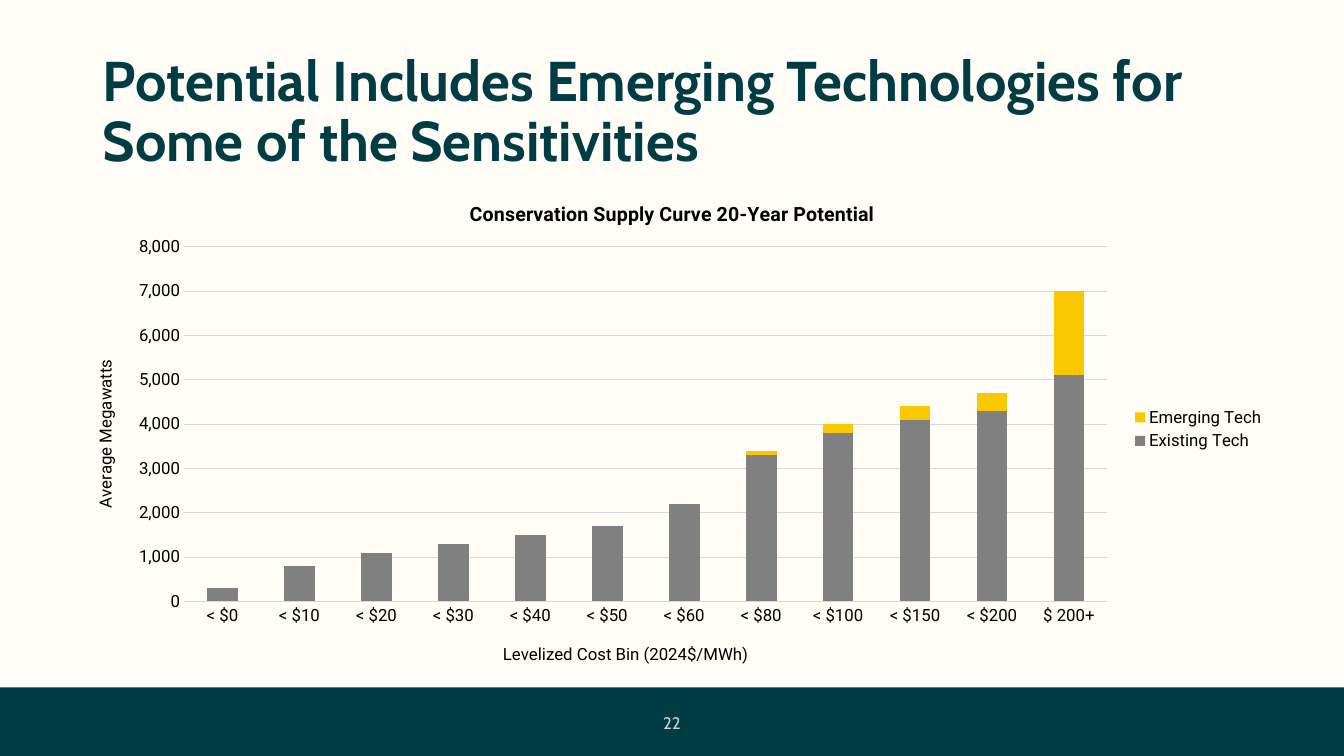
from dataclasses import dataclass

from lxml import etree
from pptx import Presentation
from pptx import util as u
from pptx.chart.data import CategoryChartData
from pptx.dml.color import RGBColor
from pptx.enum import chart as ch
from pptx.enum import shapes, text
from pptx.oxml.ns import qn


@dataclass(frozen=True)
class Theme:
    paper: str = "FFFDF5"
    teal: str = "003C44"
    pale: str = "F9FBFD"
    ink: str = "000000"
    grid: str = "D9D9D9"
    existing: str = "808080"
    emerging: str = "FAC800"
    head: str = "Cabin"
    body: str = "Roboto"
    title_size: float = 40
    chart_title_size: float = 14
    small: float = 12


def rgb(value):
    return RGBColor.from_string(value)


def set_font(font, name, size, color, bold=False):
    font.name = name
    font.size = u.Pt(size)
    font.bold = bold
    font.color.rgb = rgb(color)


def write(tf, content, name, size, color, bold=False, align=None, spacing=None, alpha=None):
    p = tf.paragraphs[0]
    p.alignment = align
    if spacing:
        p.line_spacing = spacing
    r = p.add_run()
    r.text = content
    set_font(r.font, name, size, color, bold)
    if alpha:
        clr = r.font.fill._xPr.find(".//" + qn("a:srgbClr"))
        etree.SubElement(clr, qn("a:alpha"), val=str(alpha * 1000))


def place(element, x, y, w=None, h=None, inner=False):
    for old in element.findall(qn("c:layout")):
        element.remove(old)
    layout = etree.Element(qn("c:layout"))
    manual = etree.SubElement(layout, qn("c:manualLayout"))
    if inner:
        etree.SubElement(manual, qn("c:layoutTarget"), val="inner")
    for tag in ("xMode", "yMode"):
        etree.SubElement(manual, qn("c:" + tag), val="edge")
    for tag, value in zip("xywh", (x, y, w, h)):
        if value is not None:
            etree.SubElement(manual, qn("c:" + tag), val=str(value))
    leads = [e for e in element if e.tag in (qn("c:tx"), qn("c:legendPos"))]
    element.insert(len(leads), layout)


class Deck:
    def __init__(self, theme):
        self.t = theme
        self.prs = Presentation()
        self.prs.slide_width = u.Cm(33.87)
        self.prs.slide_height = u.Cm(19.05)
        self.s = self.prs.slides.add_slide(self.prs.slide_layouts[6])
        self.s.background.fill.solid()
        self.s.background.fill.fore_color.rgb = rgb(theme.paper)

    def bar(self, x, y, w, h, color):
        sp = self.s.shapes.add_shape(shapes.MSO_SHAPE.RECTANGLE, *map(u.Cm, (x, y, w, h)))
        sp.shadow.inherit = False
        sp.fill.solid()
        sp.fill.fore_color.rgb = rgb(color)
        sp.line.fill.background()

    def label(self, x, y, w, h, content, insets=(0.25, 0.13, 0.25, 0.13), **style):
        sp = self.s.shapes.add_textbox(*map(u.Cm, (x, y, w, h)))
        tf = sp.text_frame
        tf.word_wrap = True
        tf.vertical_anchor = text.MSO_ANCHOR.MIDDLE
        tf.margin_left, tf.margin_top, tf.margin_right, tf.margin_bottom = map(u.Cm, insets)
        write(tf, content, **style)

    def chart_title(self, owner, content, x, y, size, bold=False):
        title = owner.chart_title if hasattr(owner, "chart_title") else owner.axis_title
        write(title.text_frame, content, self.t.body, size, self.t.ink, bold)
        place(title._element, x, y)

    def axis(self, axis, title, x, y):
        t = self.t
        set_font(axis.tick_labels.font, t.body, t.small, t.ink)
        axis.major_tick_mark = axis.minor_tick_mark = ch.XL_TICK_MARK.NONE
        self.chart_title(axis, title, x, y, t.small)

    def stacked_chart(self, x, y, w, h, title, x_title, y_title, cats, series):
        t = self.t
        data = CategoryChartData(number_format="#,##0")
        data.categories = cats
        for name, values, _ in series:
            data.add_series(name, values)
        chart = self.s.shapes.add_chart(
            ch.XL_CHART_TYPE.COLUMN_STACKED, *map(u.Cm, (x, y, w, h)), data).chart
        set_font(chart.font, t.body, t.small, t.ink)
        self.chart_title(chart, title, 0.33, 0.04, t.chart_title_size, bold=True)

        plot = chart.plots[0]
        plot.gap_width = 150
        plot.overlap = 100
        plot.vary_by_categories = False
        for ser, (_, _, color) in zip(plot.series, series):
            ser.format.fill.solid()
            ser.format.fill.fore_color.rgb = rgb(color)
        place(chart._chartSpace.chart.plotArea, 0.097, 0.139, 0.763, 0.702, inner=True)

        self.axis(chart.category_axis, x_title, 0.358, 0.917)
        line = chart.category_axis.format.line
        line.color.rgb = rgb(t.grid)
        line.width = u.Pt(1)

        values = chart.value_axis
        self.axis(values, y_title, 0.02, 0.356)
        values.minimum_scale, values.maximum_scale, values.major_unit = 0, 8000, 1000
        values.tick_labels.number_format = "#,##0"
        values.tick_labels.number_format_is_linked = False
        values.format.line.fill.background()
        values.major_gridlines.format.line.color.rgb = rgb(t.grid)
        values.major_gridlines.format.line.width = u.Pt(0.75)

        chart.has_legend = True
        chart.legend.position = ch.XL_LEGEND_POSITION.RIGHT
        chart.legend.include_in_layout = False
        set_font(chart.legend.font, t.body, t.small, t.ink)
        place(chart.legend._element, 0.88, 0.45, 0.11, 0.1)


def main():
    t = Theme()
    deck = Deck(t)
    deck.bar(0, 17.32, 33.87, 1.73, t.teal)
    deck.label(16.05, 17.68, 1.52, 1.09, "22", insets=(0.25, 0.25, 0, 0.25),
               name=t.head, size=t.small, color=t.pale, alpha=80,
               align=text.PP_ALIGN.CENTER)
    deck.label(2.34, 1.02, 29.21, 3.68,
               "Potential Includes Emerging Technologies for Some of the Sensitivities",
               name=t.head, size=t.title_size, color=t.teal, bold=True, spacing=0.9)
    limits = (0, 10, 20, 30, 40, 50, 60, 80, 100, 150, 200)
    existing = (300, 800, 1100, 1300, 1500, 1700, 2200, 3300, 3800, 4100, 4300, 5100)
    emerging = (0,) * 7 + (100, 200, 300, 400, 1900)
    deck.stacked_chart(
        1.68, 4.45, 30.5, 12.73,
        "Conservation Supply Curve 20-Year Potential",
        "Levelized Cost Bin (2024$/MWh)", "Average Megawatts",
        [f"< ${limit}" for limit in limits] + ["$ 200+"],
        [("Existing Tech", existing, t.existing), ("Emerging Tech", emerging, t.emerging)])
    deck.prs.save("out.pptx")


if __name__ == "__main__":
    main()
